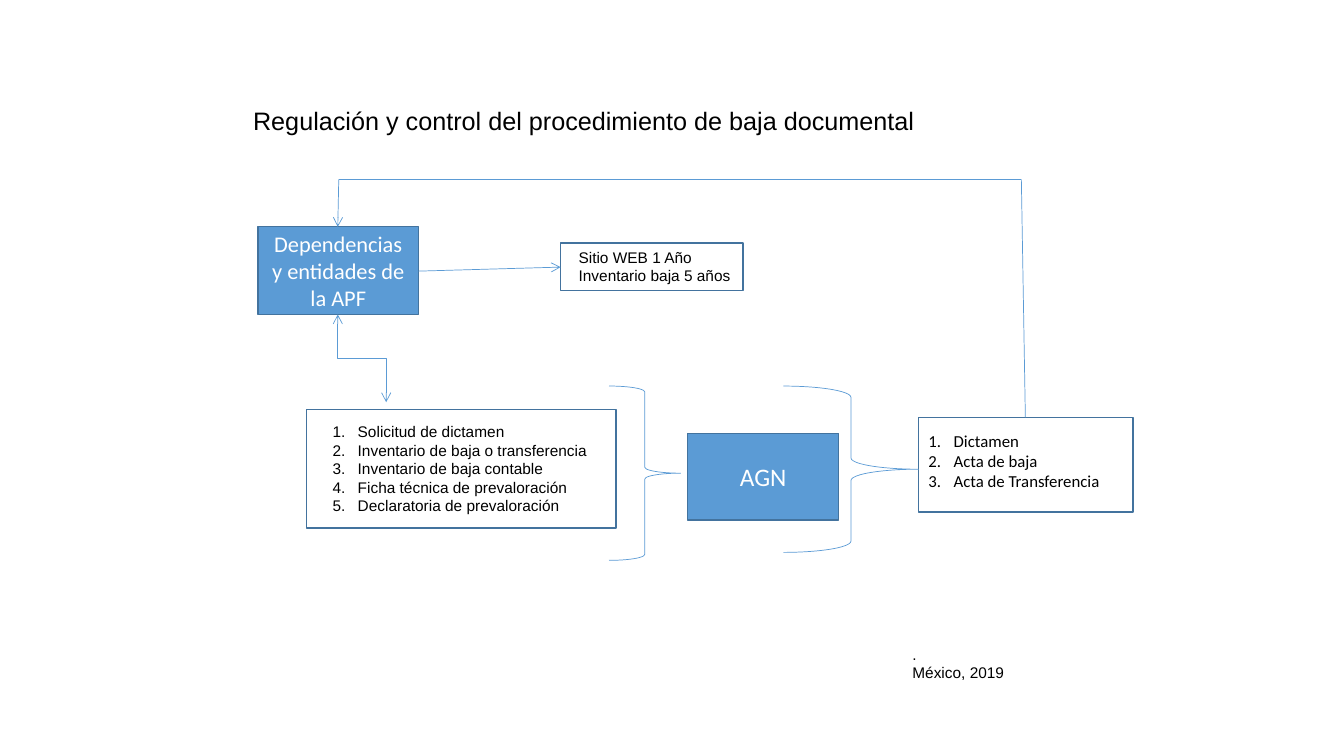
import pptx
import pptx.util
import pptx.dml.color
import pptx.enum.shapes
import pptx.enum.text
import pptx.oxml.ns
import lxml.etree

Shapes = pptx.enum.shapes.MSO_SHAPE
Links = pptx.enum.shapes.MSO_CONNECTOR
Align = pptx.enum.text.PP_ALIGN
Anchor = pptx.enum.text.MSO_ANCHOR
Fit = pptx.enum.text.MSO_AUTO_SIZE

# Content: places are (column, row, columns, rows) on a grid of 0.1 inch cells
CELL = 0.1
COLORS = {"fill": "5B9BD5", "border": "43739E", "text": "000000", "light": "FFFFFF"}

TITLE = ("Regulación y control del procedimiento de baja documental", (24.1, 9.9, 68.2, 4))
ACTORS = [
    ("AGN", (68.2, 43, 15, 8.6), 18),
    ("Dependencias y entidades de la APF", (25.6, 22.5, 15.9, 8.7), 16),
]
FRAMES = [(30.4, 40.6, 30.7, 11.8), (91.1, 41.4, 21.3, 9.4), (55.6, 24.1, 18.1, 4.7)]
BRACES = [(60.4, 38.3, 7.1, 17.3), (77.7, 38.3, 13.4, 16.5)]

# lines, place, font, size, numbered
TEXTS = [
    (["Solicitud de dictamen", "Inventario de baja o transferencia",
      "Inventario de baja contable", "Ficha técnica de prevaloración",
      "Declaratoria de prevaloración"], (32, 41.4, 27.4, 10.3), "Arial", 11, True),
    (["Dictamen", "Acta de baja", "Acta de Transferencia"],
     (91.1, 42.2, 19.2, 10.1), "Calibri", 12, True),
    (["Sitio WEB 1 Año", "Inventario baja 5 años"], (56.4, 24.1, 17.2, 4.7), "Arial", 11, False),
    ([".", "México, 2019"], (89.5, 63.5, 11.2, 4.7), "Arial", 11, False),
]

# start, end, arrowheads
WEB_ARROW = ((41.5, 26.9), (55.6, 26.5), ["tailEnd"])
RETURN_ROUTE = [(101.7, 41.4), (101.3, 17.8), (33.6, 17.8), (33.5, 22.5)]
EXCHANGE_START, EXCHANGE_END = (33.5, 31.2), (38.3, 39.9)


def grid(*cells):
    return [pptx.util.Inches(cell * CELL) for cell in cells]


def color(name):
    return pptx.dml.color.RGBColor.from_string(COLORS[name])


def add_child(parent, tag, **attributes):
    child = lxml.etree.SubElement(parent, pptx.oxml.ns.qn(tag))
    for name, value in attributes.items():
        child.set(name, value)
    return child


def write(box, lines, font, size, ink="text", align=Align.LEFT, numbered=False):
    box.text_frame.text = "\n".join(lines)
    for para in box.text_frame.paragraphs:
        para.alignment = align
        para.font.name = font
        para.font.size = pptx.util.Pt(size)
        para.font.color.rgb = color(ink)
        if numbered:
            properties = para._p.get_or_add_pPr()
            properties.set("marL", str(pptx.util.Inches(0.25)))
            properties.set("indent", str(-pptx.util.Inches(0.25)))
            number = add_child(properties, "a:buAutoNum", type="arabicPeriod")
            properties.insert(0, number)


def fit_to_text(box):
    box.text_frame.word_wrap = False
    box.text_frame.auto_size = Fit.SHAPE_TO_FIT_TEXT


def add_outline(kind, place, ink, width, filled=False):
    shape = page.shapes.add_shape(kind, *grid(*place))
    shape.shadow.inherit = False
    shape.line.color.rgb = color(ink)
    shape.line.width = pptx.util.Pt(width)
    if filled:
        shape.fill.solid()
        shape.fill.fore_color.rgb = color("fill")
    else:
        shape.fill.background()
    return shape


def add_link(start, end, heads=(), kind=Links.STRAIGHT):
    link = page.shapes.add_connector(kind, *grid(*start, *end))
    link.line.color.rgb = color("fill")
    link.line.width = pptx.util.Pt(0.5)
    for head in heads:
        add_child(link.line._get_or_add_ln(), "a:" + head, type="arrow")
    add_child(link._element.spPr, "a:effectLst")
    return link


deck = pptx.Presentation()
deck.slide_width = pptx.util.Inches(13.33)
deck.slide_height = pptx.util.Inches(7.5)
page = deck.slides.add_slide(deck.slide_layouts[5])

# Title
heading, place = TITLE
title = page.shapes.title
title.left, title.top, title.width, title.height = grid(*place)
write(title, [heading], "Arial", 18)
title.text_frame.vertical_anchor = Anchor.TOP
fit_to_text(title)

# Boxes and braces
for name, place, size in ACTORS:
    actor = add_outline(Shapes.RECTANGLE, place, "border", 1, filled=True)
    actor.text_frame.vertical_anchor = Anchor.MIDDLE
    actor.text_frame.word_wrap = True
    write(actor, [name], "Calibri", size, "light", Align.CENTER)
for place in FRAMES:
    add_outline(Shapes.RECTANGLE, place, "border", 1)
for place in BRACES:
    add_outline(Shapes.RIGHT_BRACE, place, "fill", 0.5)

# Lists and notes
for lines, place, font, size, numbered in TEXTS:
    box = page.shapes.add_textbox(*grid(*place))
    write(box, lines, font, size, numbered=numbered)
    fit_to_text(box)

# Arrows
add_link(*WEB_ARROW)
last = len(RETURN_ROUTE) - 2
for index, (start, end) in enumerate(zip(RETURN_ROUTE, RETURN_ROUTE[1:])):
    add_link(start, end, ["tailEnd"] if index == last else [])

# Elbow that leaves downwards: drawn sideways about its centre, then turned
(x1, y1), (x2, y2) = EXCHANGE_START, EXCHANGE_END
middle_x, middle_y = (x1 + x2) / 2, (y1 + y2) / 2
half_x, half_y = (y2 - y1) / 2, (x2 - x1) / 2
exchange = add_link((middle_x + half_x, middle_y - half_y),
                    (middle_x - half_x, middle_y + half_y),
                    ["headEnd", "tailEnd"], Links.ELBOW)
exchange._element.spPr.find(pptx.oxml.ns.qn("a:xfrm")).set("rot", str(270 * 60000))

deck.save("out.pptx")
